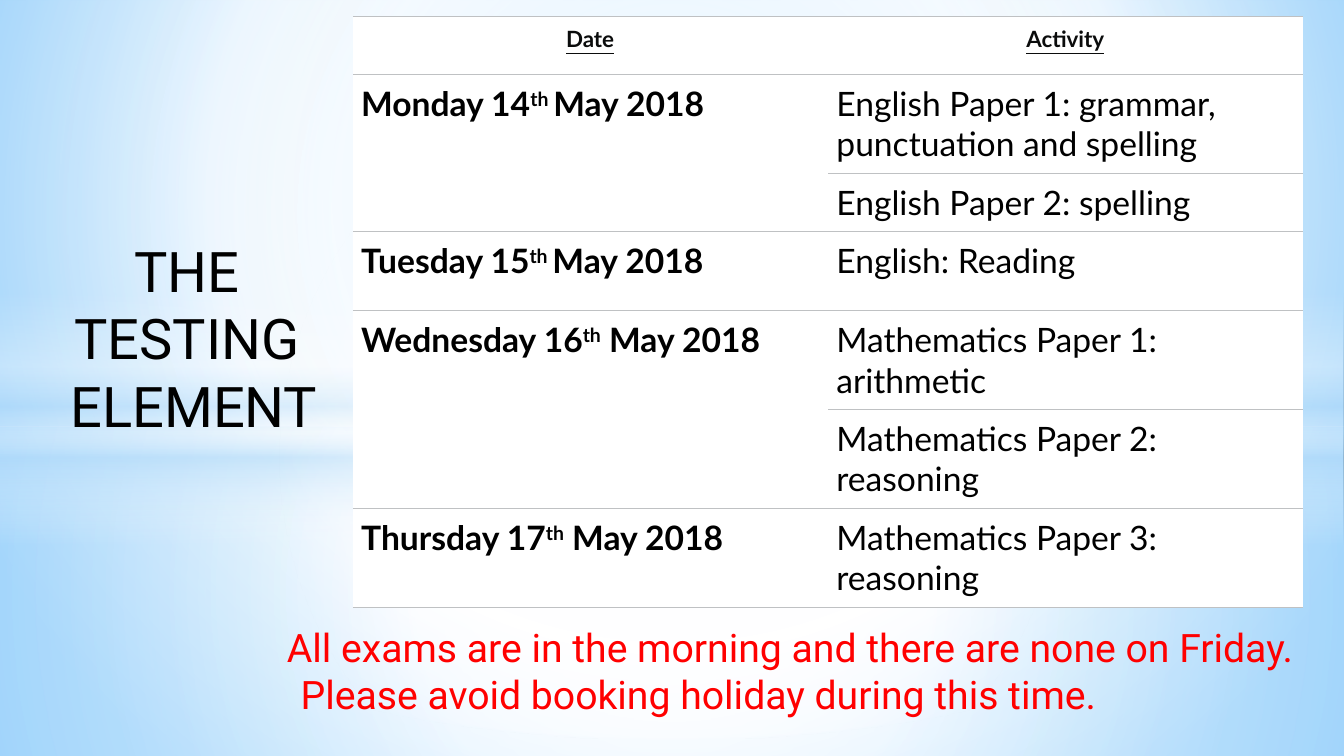
"""Builds a slide with the timetable of the school tests."""
from dataclasses import dataclass

from pptx import Presentation
from pptx.dml.color import RGBColor
from pptx.enum.shapes import MSO_SHAPE
from pptx.enum.text import MSO_ANCHOR, PP_ALIGN
from pptx.oxml import parse_xml
from pptx.oxml.ns import nsdecls, qn
from pptx.util import Pt


@dataclass(frozen=True)
class Theme:
    """Colours, fonts and type sizes."""
    white: str = "FFFFFF"
    mist: str = "B4DCFA"
    sky: str = "9ED5FF"
    blue: str = "5BB9FF"
    rule: str = "BFC1C3"
    ink: str = "000000"
    dark: str = "0B0C0C"
    red: str = "FF0000"
    text: str = "Roboto"
    grid: str = "Lato"
    title: int = 40
    note: int = 28
    cell: int = 24
    head: int = 16


class Deck:
    """Holds the theme and the current slide."""

    def __init__(self, theme):
        """Open a wide deck with one title slide."""
        self.theme = theme
        self.file = Presentation()
        self.file.slide_width, self.file.slide_height = Pt(960), Pt(540)
        self.slide = self.file.slides.add_slide(self.file.slide_layouts[5])

    def blend(self, node, stops, focus=None):
        """Swap a solid fill for a gradient, round when it has a focus."""
        marks = "".join(
            f'<a:gs pos="{pos * 1000}"><a:srgbClr val="{color}">'
            f'<a:alpha val="{alpha * 1000}"/></a:srgbClr></a:gs>'
            for pos, color, alpha in stops)
        if focus:
            left, top, right, base = (side * 1000 for side in focus)
            shade = (f'<a:path path="circle"><a:fillToRect l="{left}" t="{top}" '
                     f'r="{right}" b="{base}"/></a:path>')
        else:
            shade = '<a:lin ang="5400000" scaled="0"/>'
        fill = parse_xml(f'<a:gradFill {nsdecls("a")} rotWithShape="1">'
                         f'<a:gsLst>{marks}</a:gsLst>{shade}</a:gradFill>')
        node.replace(node.find(qn("a:solidFill")), fill)

    def ground(self, stops, focus):
        """Fill the slide background."""
        self.slide.background.fill.solid()
        self.blend(self.slide._element.cSld.bg.bgPr, stops, focus)

    def glow(self, kind, top, height, stops, focus=None):
        """Add a full-width soft shape."""
        shape = self.slide.shapes.add_shape(kind, 0, Pt(top), Pt(960), Pt(height))
        shape.shadow.inherit = False
        shape.line.fill.background()
        shape.fill.solid()
        self.blend(shape._element.spPr, stops, focus)

    def style(self, run, font, size, color, bold=False, under=False):
        """Format one run."""
        run.font.name, run.font.size = font, Pt(size)
        run.font.bold, run.font.underline = bold, under
        run.font.color.rgb = RGBColor.from_string(color)

    def words(self, shape, text, size, color, aligns):
        """Put lines of text in a shape, one alignment each."""
        frame = shape.text_frame
        frame.text = text
        frame.word_wrap = True
        frame.vertical_anchor = MSO_ANCHOR.TOP
        for line, align in zip(frame.paragraphs, aligns):
            line.alignment = align
            for run in line.runs:
                self.style(run, self.theme.text, size, color)

    def title(self, text, left, top, width, height):
        """Place the title above the soft shapes."""
        shape = self.slide.shapes.title
        shape.left, shape.top = Pt(left), Pt(top)
        shape.width, shape.height = Pt(width), Pt(height)
        self.words(shape, text, self.theme.title, self.theme.ink,
                   [PP_ALIGN.CENTER] * 3)
        self.slide.shapes._spTree.append(shape._element)

    def note(self, text, left, top, width, height, aligns):
        """Add a note in red."""
        box = self.slide.shapes.add_textbox(Pt(left), Pt(top), Pt(width), Pt(height))
        self.words(box, text, self.theme.note, self.theme.red, aligns)

    def edge(self, cell):
        """Rule a cell above and below only."""
        line = f'<a:solidFill><a:srgbClr val="{self.theme.rule}"/></a:solidFill>'
        for side in "LRTB":
            fill = line if side in "TB" else "<a:noFill/>"
            cell._tc.get_or_add_tcPr().append(parse_xml(
                f'<a:ln{side} {nsdecls("a")} w="9525">{fill}</a:ln{side}>'))

    def cell(self, cell, text, head, bold):
        """Fill a cell, raising the part between bars."""
        theme = self.theme
        self.edge(cell)
        cell.fill.solid()
        cell.fill.fore_color.rgb = RGBColor.from_string(theme.white)
        cell.margin_left = Pt(6)
        cell.margin_right = cell.margin_top = cell.margin_bottom = Pt(6.5)
        line = cell.text_frame.paragraphs[0]
        line.alignment = PP_ALIGN.CENTER if head else PP_ALIGN.LEFT
        for spot, part in enumerate(text.split("|")):
            run = line.add_run()
            run.text = part
            self.style(run, theme.grid, theme.head if head else theme.cell,
                       theme.dark if head else theme.ink, bold, head)
            if spot == 1:
                run._r.get_or_add_rPr().set("baseline", "30000")

    def table(self, rows, left, top, width, heights):
        """Add the table, joining each empty date to the one above."""
        grid = self.slide.shapes.add_table(
            len(rows), 2, Pt(left), Pt(top), Pt(width), Pt(sum(heights))).table
        grid.horz_banding = grid.first_row = False
        for col in grid.columns:
            col.width = Pt(width / 2)
        for row, (pair, height) in enumerate(zip(rows, heights)):
            grid.rows[row].height = Pt(height)
            for col, text in enumerate(pair):
                self.cell(grid.cell(row, col), text, row == 0, row == 0 or col == 0)
        for row, (date, _) in enumerate(rows):
            if not date:
                grid.cell(row - 1, 0).merge(grid.cell(row, 0))


def main():
    """Build and save the slide."""
    theme = Theme()
    white, mist = theme.white, theme.mist
    mid = (50, 50, 50, 50)
    deck = Deck(theme)
    deck.ground([(0, theme.sky, 100), (60, white, 100), (100, theme.blue, 100)],
                (20, 10, 20, 60))
    deck.glow(MSO_SHAPE.RECTANGLE, 304.5, 235.5,
              [(0, white, 91), (37, white, 76), (100, mist, 79)], mid)
    deck.glow(MSO_SHAPE.RECTANGLE, 0, 304.5,
              [(0, white, 89), (48, white, 62), (100, mist, 79)], mid)
    deck.glow(MSO_SHAPE.RECTANGLE, 209, 180,
              [(0, white, 0), (29, white, 30), (45, mist, 40),
               (55, white, 26), (65, mist, 60), (100, white, 0)])
    deck.glow(MSO_SHAPE.OVAL, 126, 402, [(0, white, 100), (54, white, 0)], mid)
    rows = [
        ("Date", "Activity"),
        ("Monday 14|th |May 2018", "English Paper 1: grammar, punctuation and spelling"),
        ("", "English Paper 2: spelling"),
        ("Tuesday 15|th |May 2018", "English: Reading"),
        ("Wednesday 16|th| May 2018", "Mathematics Paper 1: arithmetic"),
        ("", "Mathematics Paper 2: reasoning"),
        ("Thursday 17|th| May 2018", "Mathematics Paper 3: reasoning"),
    ]
    deck.table(rows, 252, 12, 679, [41, 70, 41.4, 56.4, 70, 70, 70])
    deck.title("THE \nTESTING \nELEMENT", 25, 165.5, 227, 152.5)
    deck.note("All exams are in the morning and there are none on Friday. \n"
              "Please avoid booking holiday during this time.",
              60, 441.5, 877.5, 75, [PP_ALIGN.RIGHT, PP_ALIGN.CENTER])
    deck.file.save("out.pptx")


if __name__ == "__main__":
    main()
